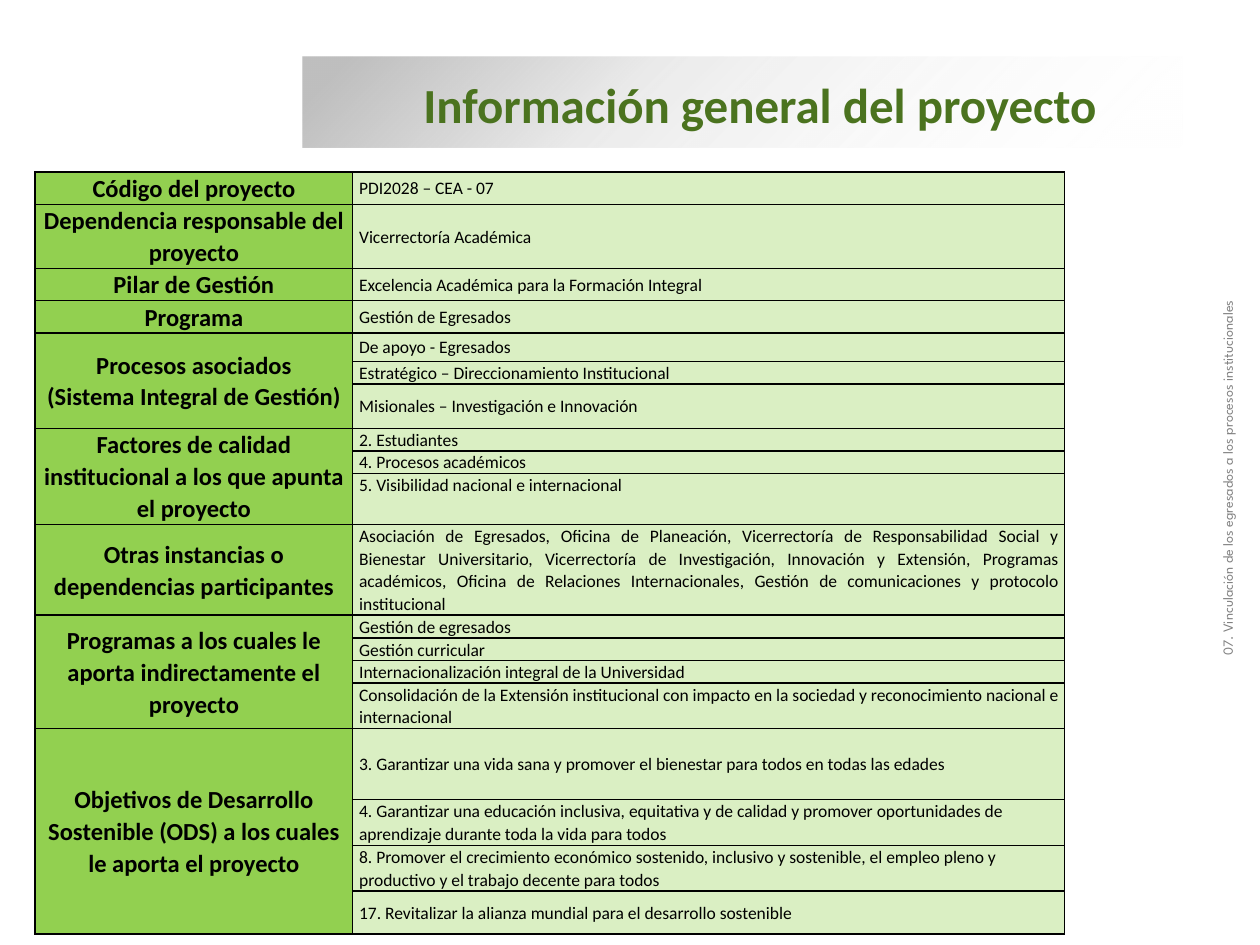
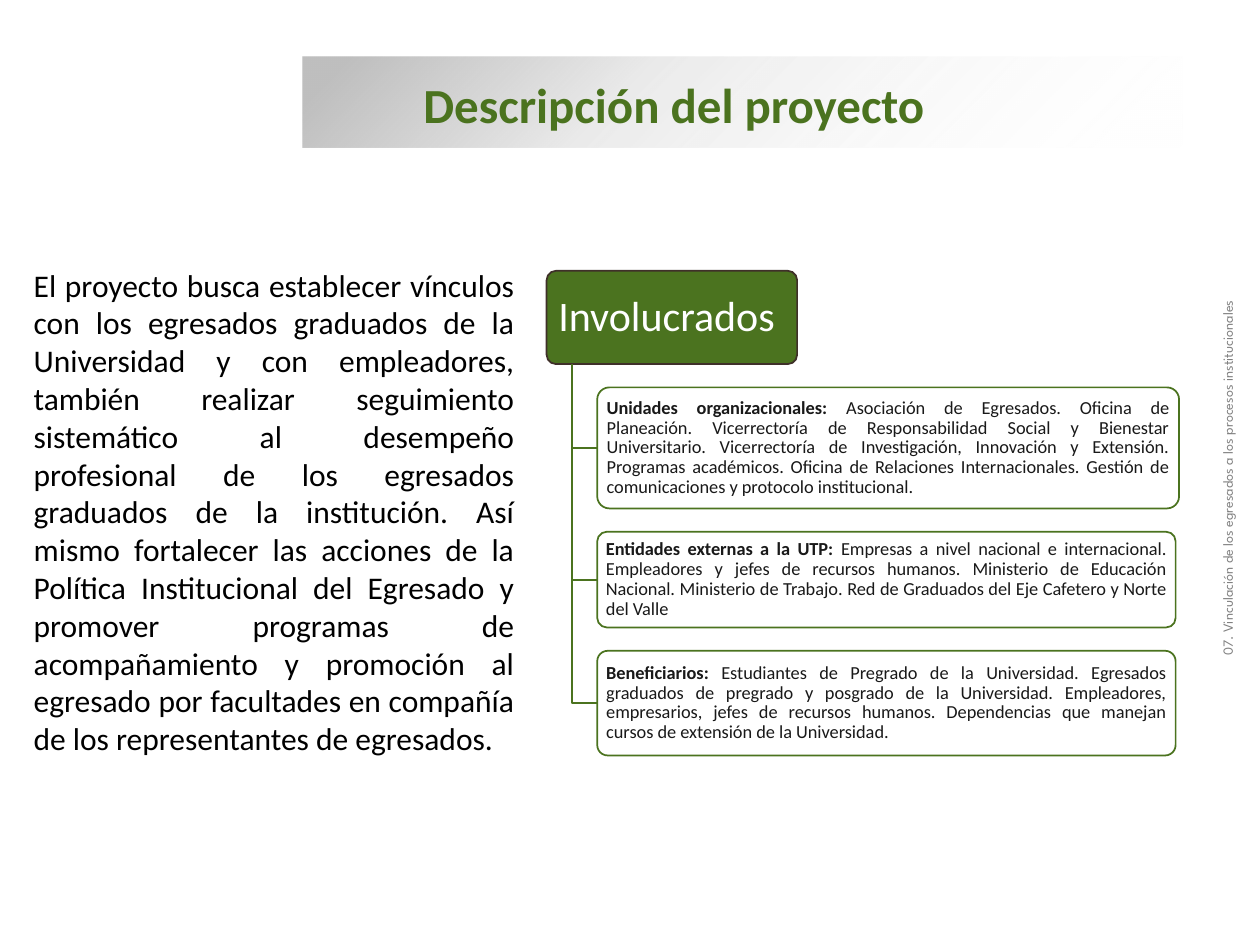
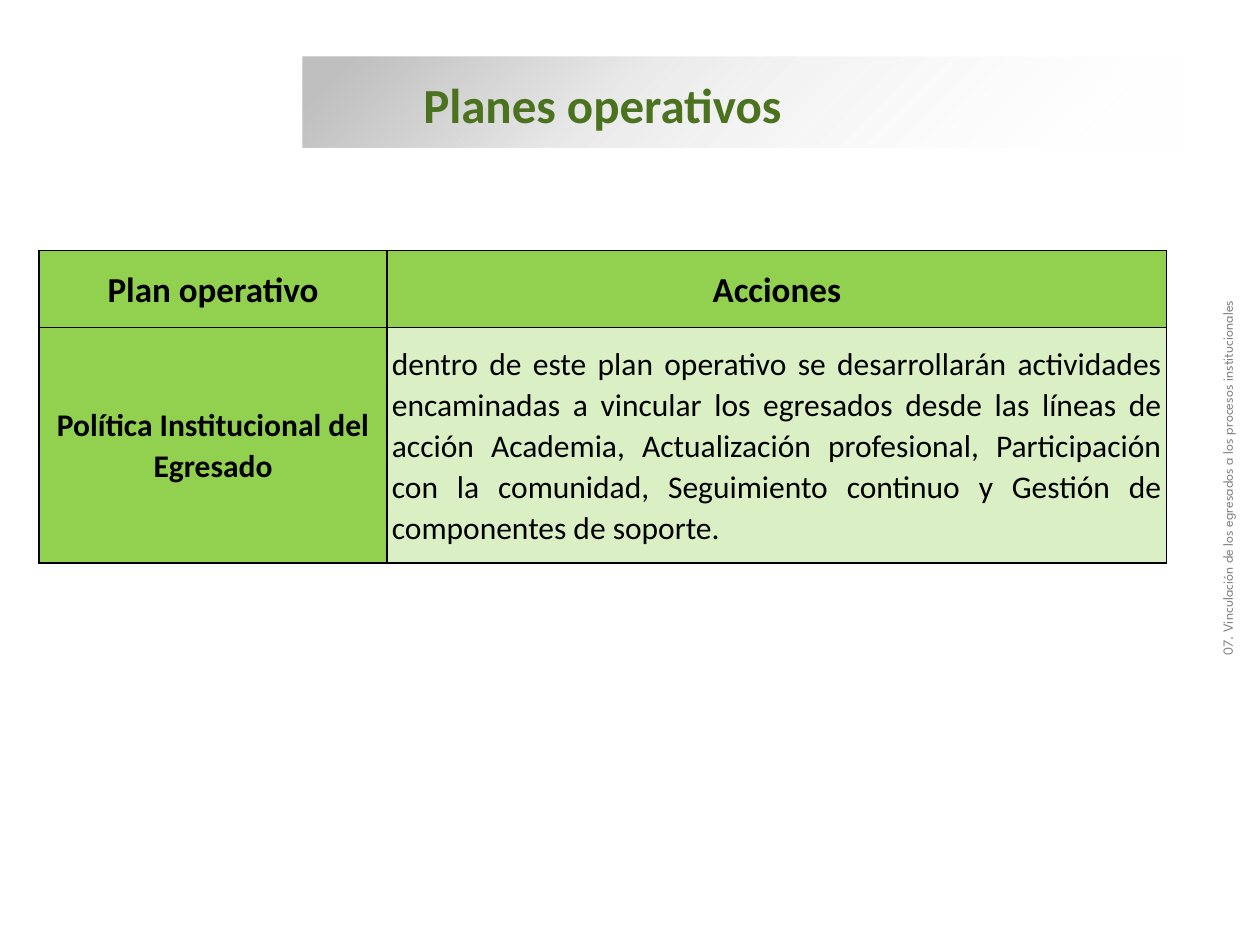
from dataclasses import dataclass

from lxml import etree
from pptx import Presentation
from pptx.dml.color import RGBColor
from pptx.enum.shapes import MSO_SHAPE
from pptx.enum.text import MSO_ANCHOR as ANCHOR, MSO_AUTO_SIZE as AUTO, PP_ALIGN as ALIGN
from pptx.oxml import parse_xml
from pptx.oxml.ns import nsdecls, qn
from pptx.util import Cm, Pt


@dataclass(frozen=True)
class Theme:
    font: str = "Calibri"
    footer_font: str = "League Spartan"
    green: str = "4B731F"
    label_fill: str = "92D050"
    value_fill: str = "DAEFC3"
    head_line: str = "3F3029"
    band: str = "BFBFBF"
    footer: str = "808080"
    body: str = "191919"
    black: str = "000000"
    white: str = "FFFFFF"
    title_size: float = 28
    head_size: float = 24
    column_size: float = 20
    text_size: float = 18
    label_size: float = 14
    item_size: float = 10.5
    value_size: float = 10
    footer_size: float = 8


T = Theme()

# Boxes are left, top, width, height in centimetres.
BAND_BOX = (6.1, 1.14, 17.73, 1.83)
TITLE_BOX = (8.28, 1.37, 15.75, 1.45)
FOOTER_BOX = (18.77, 9.17, 12.29, 0.94)
FOOTER = "07. Vinculación de los egresados a los procesos institucionales"

# Each group: label, then (value, row height in centimetres).
PROJECT_INFO = [
    ("Código del proyecto", [("PDI2028 – CEA - 07", 0.65)]),
    ("Dependencia responsable del proyecto", [("Vicerrectoría Académica", 1.29)]),
    ("Pilar de Gestión", [("Excelencia Académica para la Formación Integral", 0.65)]),
    ("Programa", [("Gestión de Egresados", 0.65)]),
    ("Procesos asociados\v(Sistema Integral de Gestión)", [
        ("De apoyo - Egresados", 0.58),
        ("Estratégico – Direccionamiento Institucional", 0.45),
        ("Misionales – Investigación e Innovación", 0.89)]),
    ("Factores de calidad institucional a los que apunta el proyecto", [
        ("2. Estudiantes", 0.45),
        ("4. Procesos académicos", 0.45),
        ("5. Visibilidad nacional e internacional", 1.03)]),
    ("Otras instancias o dependencias participantes", [
        ("Asociación de Egresados, Oficina de Planeación, Vicerrectoría de Responsabilidad "
         "Social y Bienestar Universitario, Vicerrectoría de Investigación, Innovación y "
         "Extensión, Programas académicos, Oficina de Relaciones Internacionales, Gestión "
         "de comunicaciones y protocolo institucional", 1.83)]),
    ("Programas a los cuales le aporta indirectamente el proyecto", [
        ("Gestión de egresados", 0.46),
        ("Gestión curricular", 0.45),
        ("Internacionalización integral de la Universidad", 0.45),
        ("Consolidación de la Extensión institucional con impacto en la sociedad y "
         "reconocimiento nacional e internacional", 0.92)]),
    ("Objetivos de Desarrollo Sostenible (ODS) a los cuales le aporta el proyecto", [
        ("3. Garantizar una vida sana y promover el bienestar para todos en todas las edades",
         1.43),
        ("4. Garantizar una educación inclusiva, equitativa y de calidad y promover "
         "oportunidades de aprendizaje durante toda la vida para todos", 0.92),
        ("8. Promover el crecimiento económico sostenido, inclusivo y sostenible, el empleo "
         "pleno y productivo y el trabajo decente para todos", 0.92),
        ("17. Revitalizar la alianza mundial para el desarrollo sostenible", 0.87)]),
]
JUSTIFIED_LABEL = "Otras instancias o dependencias participantes"
TOP_VALUES = ("4. Procesos académicos", "5. Visibilidad nacional e internacional")

DESCRIPTION = (
    "El proyecto busca establecer vínculos con los egresados graduados de la Universidad y con "
    "empleadores, también realizar seguimiento sistemático al desempeño profesional de los "
    "egresados graduados de la institución. Así mismo fortalecer las acciones de la Política "
    "Institucional del Egresado y promover programas de acompañamiento y promoción al egresado "
    "por facultades en compañía de los representantes de egresados.")

# Each group: heading, text, box width and height in centimetres.
STAKEHOLDERS = [
    ("Unidades organizacionales: ",
     "Asociación de Egresados. Oficina de Planeación. Vicerrectoría de Responsabilidad Social y "
     "Bienestar Universitario. Vicerrectoría de Investigación, Innovación y Extensión. Programas "
     "académicos. Oficina de Relaciones Internacionales. Gestión de comunicaciones y protocolo "
     "institucional.", 11.73, 2.44),
    ("Entidades externas a la UTP: ",
     "Empresas a nivel nacional e internacional. Empleadores y jefes de recursos humanos. "
     "Ministerio de Educación Nacional. Ministerio de Trabajo. Red de Graduados del Eje Cafetero "
     "y Norte del Valle", 11.66, 1.93),
    ("Beneficiarios: ",
     "Estudiantes de Pregrado de la Universidad. Egresados graduados de pregrado y posgrado de "
     "la Universidad. Empleadores, empresarios, jefes de recursos humanos. Dependencias que "
     "manejan cursos de extensión de la Universidad.", 11.66, 2.11),
]

PLAN_ACTIONS = (
    "dentro de este plan operativo se desarrollarán actividades encaminadas a vincular los "
    "egresados desde las líneas de acción Academia, Actualización profesional, Participación con "
    "la comunidad, Seguimiento continuo y Gestión de componentes de soporte.")


def rgb(color):
    return RGBColor.from_string(color)


def cm(box):
    return [Cm(v) for v in box]


def style_run(r, size, color, bold=False, font=T.font):
    r.font.name, r.font.size, r.font.bold = font, Pt(size), bold
    r.font.color.rgb = rgb(color)


def style_paragraph(p, size, color, align=ALIGN.LEFT, spacing=None, **run_style):
    p.alignment = align
    if spacing:
        p.line_spacing = spacing
    for r in p.runs:
        style_run(r, size, color, **run_style)


def set_margins(target, x, y):
    target.margin_left = target.margin_right = Cm(x)
    target.margin_top = target.margin_bottom = Cm(y)


def add_text(s, box, text, size, color, **style):
    sp = s.shapes.add_textbox(*cm(box))
    tf = sp.text_frame
    tf.word_wrap = True
    tf.text = text
    style_paragraph(tf.paragraphs[0], size, color, **style)
    return sp


def add_band(s, box):
    sp = s.shapes.add_shape(MSO_SHAPE.RECTANGLE, *cm(box))
    sp.shadow.inherit = False
    sp.line.fill.background()
    stops = "".join(
        f'<a:gs pos="{pos}000"><a:srgbClr val="{color}"><a:alpha val="{alpha}000"/>'
        "</a:srgbClr></a:gs>"
        for pos, color, alpha in ((5, T.band, 100), (37, T.band, 31), (100, T.white, 0)))
    gradient = parse_xml(f'<a:gradFill {nsdecls("a")} rotWithShape="1"><a:gsLst>{stops}</a:gsLst>'
                         '<a:lin ang="2700000" scaled="0"/></a:gradFill>')
    sp.element.spPr.find(qn("a:prstGeom")).addnext(gradient)


def add_titled_slide(prs, text):
    """Add a slide with the title over its grey band and the rotated side footer."""
    s = prs.slides.add_slide(prs.slide_layouts[5])
    add_band(s, BAND_BOX)
    title = s.shapes.title
    title.element.getparent().append(title.element)  # in front of the band
    title.left, title.top, title.width, title.height = cm(TITLE_BOX)
    tf = title.text_frame
    tf.text = text
    tf.auto_size, tf.vertical_anchor = AUTO.NONE, ANCHOR.MIDDLE
    style_paragraph(tf.paragraphs[0], T.title_size, T.green, bold=True)
    footer = add_text(s, FOOTER_BOX, FOOTER, T.footer_size, T.footer,
                      align=ALIGN.CENTER, font=T.footer_font)
    footer.rotation = 270
    return s


def add_plain_table(s, left, top, widths, heights):
    table = s.shapes.add_table(len(heights), len(widths), Cm(left), Cm(top),
                               Cm(sum(widths)), Cm(sum(heights))).table
    table.first_row = table.horz_banding = False
    for column, width in zip(table.columns, widths):
        column.width = Cm(width)
    for row, height in zip(table.rows, heights):
        row.height = Cm(height)
    return table


def add_borders(cell):
    tc_pr = cell._tc.get_or_add_tcPr()
    for i, side in enumerate(("lnL", "lnR", "lnT", "lnB")):
        tc_pr.insert(i, parse_xml(
            f'<a:{side} {nsdecls("a")} w="{Pt(1)}"><a:solidFill><a:srgbClr val="{T.black}"/>'
            f"</a:solidFill></a:{side}>"))


def fill_cell(cell, text, size, fill, margin=0.1, anchor=ANCHOR.MIDDLE, **style):
    cell.fill.solid()
    cell.fill.fore_color.rgb = rgb(fill)
    add_borders(cell)
    set_margins(cell, margin, 0)
    cell.vertical_anchor = anchor
    cell.text_frame.text = text
    style_paragraph(cell.text_frame.paragraphs[0], size, T.black, spacing=1.07, **style)


def label_cell(cell, text, size):
    fill_cell(cell, text, size, T.label_fill, align=ALIGN.CENTER, bold=True)


def add_info_table(s, left, top, widths):
    heights = [height for _, values in PROJECT_INFO for _, height in values]
    table = add_plain_table(s, left, top, widths, heights)
    row = 0
    for label, values in PROJECT_INFO:
        align = ALIGN.JUSTIFY if label == JUSTIFIED_LABEL else ALIGN.LEFT
        for i, (value, _) in enumerate(values):
            label_cell(table.cell(row + i, 0), "" if i else label, T.label_size)
            anchor = ANCHOR.TOP if value in TOP_VALUES else ANCHOR.MIDDLE
            fill_cell(table.cell(row + i, 1), value, T.value_size, T.value_fill,
                      margin=0.13, anchor=anchor, align=align)
        if len(values) > 1:
            table.cell(row, 0).merge(table.cell(row + len(values) - 1, 0))
        row += len(values)


def add_plan_table(s, left, top, widths, heights):
    table = add_plain_table(s, left, top, widths, heights)
    label_cell(table.cell(0, 0), "Plan operativo", T.column_size)
    label_cell(table.cell(0, 1), "Acciones", T.column_size)
    label_cell(table.cell(1, 0), "Política Institucional del Egresado", T.text_size)
    fill_cell(table.cell(1, 1), PLAN_ACTIONS, T.text_size, T.value_fill, align=ALIGN.JUSTIFY)


def add_rounded_box(s, box, fill, line, margins):
    sp = s.shapes.add_shape(MSO_SHAPE.ROUNDED_RECTANGLE, *cm(box))
    sp.shadow.inherit = False
    sp.adjustments[0] = 0.1
    sp.fill.solid()
    sp.fill.fore_color.rgb = rgb(fill)
    sp.line.color.rgb, sp.line.width = rgb(line), Pt(1)
    tf = sp.text_frame
    tf.word_wrap, tf.vertical_anchor = True, ANCHOR.MIDDLE
    set_margins(tf, *margins)
    return sp


def add_elbow(s, x, top, end_x, end_y):
    builder = s.shapes.build_freeform(Cm(x), Cm(top))
    builder.add_line_segments([(Cm(x), Cm(end_y)), (Cm(end_x), Cm(end_y))], close=False)
    sp = builder.convert_to_shape()
    sp.shadow.inherit = False
    sp.fill.background()
    sp.line.color.rgb, sp.line.width = rgb(T.green), Pt(1)


def add_stakeholders(s, left, top):
    """Draw the heading box with its three groups hanging from a trunk line."""
    head_w, head_h, indent, gap = 5.05, 1.88, 0.51, 0.47
    head = add_rounded_box(s, (left, top, head_w, head_h), T.green, T.head_line, (0.18, 0.13))
    head.text_frame.text = "Involucrados"
    style_paragraph(head.text_frame.paragraphs[0], T.head_size, T.white, spacing=0.9)

    trunk_x, item_x, head_bottom = left + indent, left + 2 * indent, top + head_h
    y = head_bottom + gap
    for heading, text, width, height in STAKEHOLDERS:
        add_elbow(s, trunk_x, head_bottom, item_x, y + height / 2)
        sp = add_rounded_box(s, (item_x, y, width, height), T.white, T.green, (0.12, 0.1))
        color = sp.element.spPr.find(qn("a:solidFill"))[0]
        etree.SubElement(color, qn("a:alpha"), val="90000")
        p = sp.text_frame.paragraphs[0]
        p.text = heading
        p.add_run().text = text
        style_paragraph(p, T.item_size, T.body, align=ALIGN.JUSTIFY, spacing=0.9)
        p.runs[0].font.bold = True
        y += height + gap


def main():
    prs = Presentation()
    prs.slide_width, prs.slide_height = Cm(25.4), Cm(19.05)

    s = add_titled_slide(prs, "Información general del proyecto")
    add_info_table(s, 0.71, 3.47, (6.4, 14.35))

    s = add_titled_slide(prs, "Descripción del proyecto")
    add_text(s, (0.43, 5.23, 10.19, 10.26), DESCRIPTION, T.text_size, T.black,
             align=ALIGN.JUSTIFY)
    add_stakeholders(s, 11.02, 5.46)

    s = add_titled_slide(prs, "Planes operativos")
    add_plan_table(s, 0.79, 5.05, (7.01, 15.72), (1.55, 4.75))

    prs.save("out.pptx")


if __name__ == "__main__":
    main()
